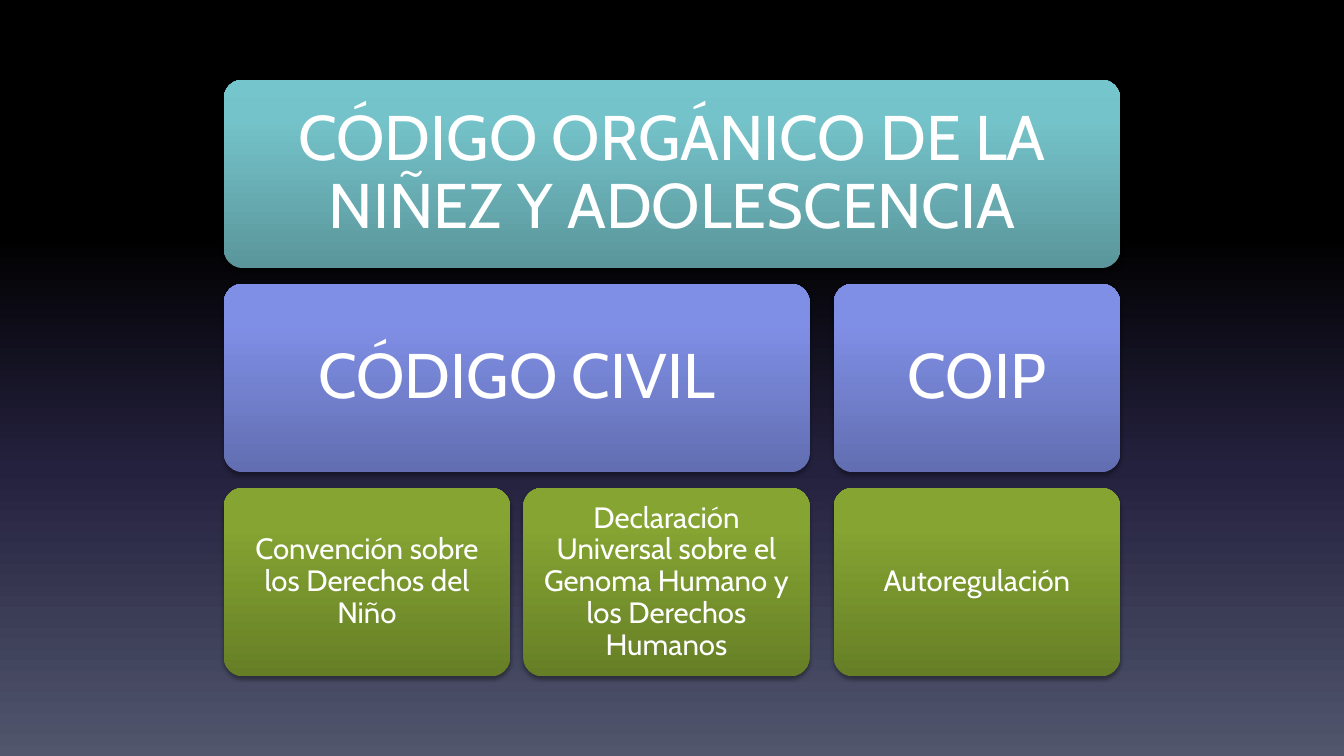
from lxml import etree
from pptx import Presentation
from pptx.dml.color import RGBColor
from pptx.enum.shapes import MSO_SHAPE
from pptx.enum.text import MSO_ANCHOR, PP_ALIGN
from pptx.oxml.ns import qn
from pptx.util import Inches, Pt

ROUNDED = MSO_SHAPE.ROUNDED_RECTANGLE
MIDDLE = MSO_ANCHOR.MIDDLE
CENTER = PP_ALIGN.CENTER

COLORS = {"text": "FFFFFF", "shadow": "000000"}
GRADIENTS = {
    "background": {0: "000000", 31: "000000", 62: "24213E", 100: "51566D"},
    "teal": {0: "5A969B", 80: "75C3CA", 100: "74C6CC"},
    "blue": {0: "626EB1", 80: "808FE6", 100: "7E8EE9"},
    "green": {0: "667F26", 80: "85A432", 100: "87A730"},
}
UPWARD, DOWNWARD = 90, 270

COLUMN_LEFTS = (2.22, 5.19, 8.27)
COLUMN_WIDTH = 2.84
FIRST_TOP, LAST_TOP, ROW_HEIGHT = 0.79, 4.84, 1.87

# Each row: gradient, text size, margin, then (text, first column, last column)
ROWS = (
    ("teal", 45, 0.19, [("CÓDIGO ORGÁNICO DE LA NIÑEZ Y ADOLESCENCIA", 0, 2)]),
    ("blue", 45, 0.19, [("CÓDIGO CIVIL", 0, 1), ("COIP", 2, 2)]),
    ("green", 21, 0.09, [
        ("Convención sobre los Derechos del Niño", 0, 0),
        ("Declaración Universal sobre el Genoma Humano y los Derechos Humanos", 1, 1),
        ("Autoregulación", 2, 2),
    ]),
)


class SlideBuilder:
    font = "Cabin"

    def __init__(self, slide):
        self.slide = slide

    def set_gradient(self, fill, owner, name, angle):
        """Fill with a named gradient; owner is the XML element that holds the fill."""
        fill.gradient()
        fill.gradient_angle = angle
        stops = owner.find(".//" + qn("a:gsLst"))
        for stop in list(stops):
            stops.remove(stop)
        for percent, color in GRADIENTS[name].items():
            stop = etree.SubElement(stops, qn("a:gs"), pos=str(percent * 1000))
            etree.SubElement(stop, qn("a:srgbClr"), val=color)

    def set_background(self, name):
        self.set_gradient(self.slide.background.fill, self.slide.element, name, DOWNWARD)

    def add_shadow(self, shape):
        shape.shadow.inherit = False
        effects = shape.element.find(".//" + qn("a:effectLst"))
        shadow = etree.SubElement(
            effects, qn("a:outerShdw"), blurRad=str(Pt(3.1)), dist=str(Pt(1.8)),
            dir="5400000", rotWithShape="0")
        color = etree.SubElement(shadow, qn("a:srgbClr"), val=COLORS["shadow"])
        etree.SubElement(color, qn("a:alpha"), val="35000")

    def add_box(self, text, left, top, width, gradient, size, margin):
        box = self.slide.shapes.add_shape(
            ROUNDED, Inches(left), Inches(top), Inches(width), Inches(ROW_HEIGHT))
        box.adjustments[0] = 0.1
        self.set_gradient(box.fill, box.element, gradient, UPWARD)
        box.line.fill.background()
        self.add_shadow(box)
        self.set_text(box.text_frame, text, size, margin)

    def set_text(self, frame, text, size, margin):
        frame.text = text
        frame.word_wrap = True
        frame.vertical_anchor = MIDDLE
        frame.margin_left = frame.margin_right = Inches(margin)
        frame.margin_top = frame.margin_bottom = Inches(margin)
        para = frame.paragraphs[0]
        para.alignment = CENTER
        para.line_spacing = 0.9
        span = para.runs[0]
        span.font.name = self.font
        span.font.size = Pt(size)
        span.font.color.rgb = RGBColor.from_string(COLORS["text"])


def main():
    deck = Presentation()
    deck.slide_width, deck.slide_height = Inches(13.33), Inches(7.5)
    builder = SlideBuilder(deck.slides.add_slide(deck.slide_layouts[6]))
    builder.set_background("background")
    row_step = (LAST_TOP - FIRST_TOP) / (len(ROWS) - 1)
    for row, (gradient, size, margin, boxes) in enumerate(ROWS):
        for text, first, last in boxes:
            left = COLUMN_LEFTS[first]
            width = COLUMN_LEFTS[last] + COLUMN_WIDTH - left
            builder.add_box(text, left, FIRST_TOP + row * row_step, width,
                            gradient, size, margin)
    deck.save("out.pptx")


if __name__ == "__main__":
    main()
